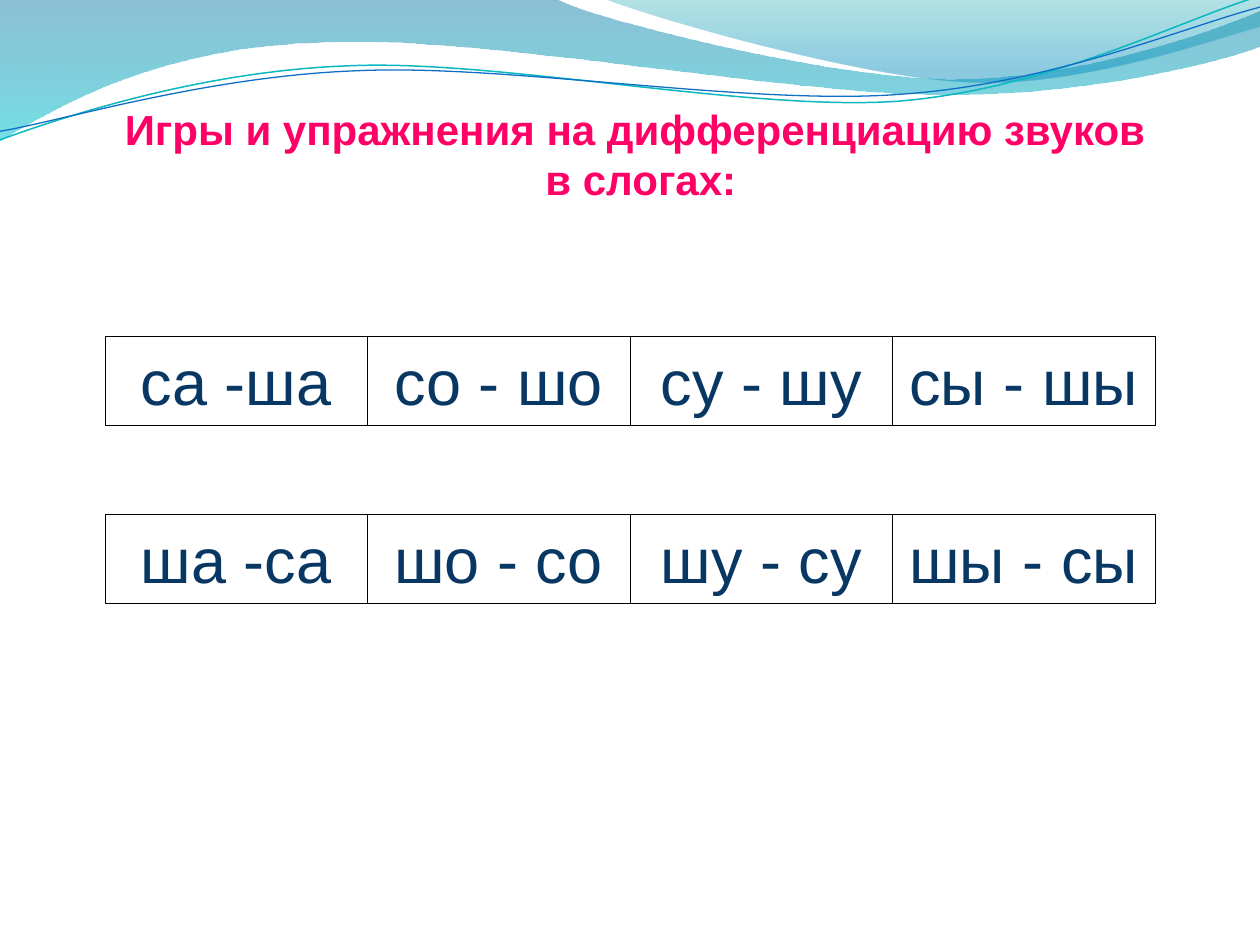
from dataclasses import dataclass
from math import cos, radians, sin

from lxml import etree
from pptx import Presentation
from pptx.dml.color import RGBColor
from pptx.enum.shapes import MSO_SHAPE
from pptx.enum.text import MSO_ANCHOR, MSO_AUTO_SIZE, PP_ALIGN
from pptx.oxml.ns import qn
from pptx.util import Pt

RECTANGLE = MSO_SHAPE.RECTANGLE
MIDDLE, BOTTOM = MSO_ANCHOR.MIDDLE, MSO_ANCHOR.BOTTOM
CENTER = PP_ALIGN.CENTER
NO_AUTOFIT = MSO_AUTO_SIZE.NONE
TITLE_ONLY = 5
FONT = "Arial"
RIBBON_TILT = -2.7
COLORS = {
    "title": "FF0066",
    "syllable": "083763",
    "border": "000000",
    "deep_blue": "0074A1",
    "turquoise": "00C6CF",
    "teal": "00A1A9",
    "sky": "008BBF",
    "teal_line": "0AB8BF",
    "blue_line": "0F6FC6",
}
SYLLABLE_ROWS = [
    (192, ["са -ша", "со - шо", "су - шу", "сы - шы"]),
    (293.75, ["ша -са", "шо - со", "шу - су", "шы - сы"]),
]
CELL_LEFT, CELL_WIDTH, CELL_HEIGHT = 60, 150, 51

Point = tuple[float, float]
Segment = tuple[Point, ...]


@dataclass
class Stop:
    position: float
    color: str
    opacity: int


@dataclass
class Wave:
    start: Point
    segments: list[Segment]
    stops: tuple[Stop, Stop]


@dataclass
class Ribbon:
    start: Point
    segments: list[Segment]
    color: str
    width: float


WAVES = [
    Wave(
        (0, 0),
        [
            ((316.8, -0.7),),
            ((342.7, 12.2), (478.1, 45.4), (545.8, 45.4)),
            ((614.2, 45.4), (689.8, 18.7), (720, 6.5)),
            ((720.7, 25.9),),
            ((707.8, 31.7), (626.4, 54.7), (537.1, 54)),
            ((447.8, 54), (275, 20.2), (185, 24.5)),
            ((92.9, 25.9), (33.1, 59.8), (-0.7, 81.4)),
        ],
        (Stop(0, "deep_blue", 45), Stop(1, "turquoise", 55)),
    ),
    Wave(
        (344.9, -0.7),
        [
            ((366.5, 7.9), (491, 44.6), (553.7, 46.8)),
            ((616.3, 49.7), (691.9, 23), (720, 15.1)),
            ((720, 0),),
        ],
        (Stop(0, "teal", 30), Stop(0.8, "sky", 45)),
    ),
]
RIBBONS = [
    Ribbon(
        (0, 79.9),
        [
            ((34.6, 67), (113.8, 41), (199.4, 37.4)),
            ((284.4, 33.8), (427, 64.1), (513.4, 57.6)),
            ((599.8, 51.1), (675.4, 10.8), (718.6, -1.4)),
        ],
        "teal_line",
        0.85,
    ),
    Ribbon(
        (0, 74.9),
        [
            ((33.8, 69.1), (118.1, 43.9), (203.8, 40.3)),
            ((290.2, 36.7), (429.8, 60.5), (516.2, 54)),
            ((601.9, 48.2), (677.5, 15.1), (720, 4.3)),
        ],
        "blue_line",
        0.75,
    ),
]


def rgb(name: str) -> RGBColor:
    return RGBColor.from_string(COLORS[name])


def turn(point: Point, degrees: float) -> Point:
    x, y = point
    angle = radians(degrees)
    return x * cos(angle) - y * sin(angle), x * sin(angle) + y * cos(angle)


def draw_outline(page, start: Point, segments: list[Segment], close: bool):
    builder = page.shapes.build_freeform(*start, scale=Pt(1))
    builder.add_line_segments([point for segment in segments for point in segment], close=close)
    shape = builder.convert_to_shape()
    shape.shadow.inherit = False
    steps = iter(list(shape.element.spPr.iter(qn("a:lnTo"))))
    for segment in segments:
        first, *others = [next(steps) for _ in segment]
        if others:
            first.tag = qn("a:cubicBezTo")
        for other in others:
            first.append(other[0])
            other.getparent().remove(other)
    return shape


def draw_wave(page, wave: Wave) -> None:
    shape = draw_outline(page, wave.start, wave.segments, True)
    shape.line.fill.background()
    shape.fill.gradient()
    shape.fill.gradient_angle = 270
    for target, stop in zip(shape.fill.gradient_stops, wave.stops):
        target.position = stop.position
        target.color.rgb = rgb(stop.color)
    gradient = shape.element.spPr.find(qn("a:gradFill"))
    for color, stop in zip(gradient.iter(qn("a:srgbClr")), wave.stops):
        etree.SubElement(color, qn("a:alpha")).set("val", str(stop.opacity * 1000))


def draw_ribbon(page, ribbon: Ribbon) -> None:
    level_start = turn(ribbon.start, -RIBBON_TILT)
    level_segments = [tuple(turn(p, -RIBBON_TILT) for p in segment) for segment in ribbon.segments]
    shape = draw_outline(page, level_start, level_segments, False)
    middle = (shape.left + shape.width / 2, shape.top + shape.height / 2)
    x, y = turn(middle, RIBBON_TILT)
    shape.left, shape.top = int(x - shape.width / 2), int(y - shape.height / 2)
    shape.rotation = RIBBON_TILT
    shape.fill.background()
    shape.line.color.rgb = rgb(ribbon.color)
    shape.line.width = Pt(ribbon.width)


def format_para(para, size: float, color: str, bold: bool) -> None:
    para.alignment = CENTER
    para.font.name = FONT
    para.font.size = Pt(size)
    para.font.bold = bold
    para.font.color.rgb = rgb(color)


def write_title(page) -> None:
    title = page.shapes.title
    title.left, title.top, title.width, title.height = Pt(36), Pt(55.4), Pt(653.8), Pt(90)
    frame = title.text_frame
    frame.auto_size = NO_AUTOFIT
    frame.word_wrap = True
    frame.vertical_anchor = BOTTOM
    frame.margin_left = frame.margin_right = 0
    frame.margin_bottom = Pt(28.8)
    para = frame.paragraphs[0]
    para.text = "Игры и упражнения на дифференциацию звуков\v в слогах:"
    format_para(para, 24, "title", True)


def draw_cell(page, left: float, top: float, text: str) -> None:
    box = page.shapes.add_shape(RECTANGLE, Pt(left), Pt(top), Pt(CELL_WIDTH), Pt(CELL_HEIGHT))
    box.shadow.inherit = False
    box.fill.background()
    box.line.color.rgb = rgb("border")
    box.line.width = Pt(0.25)
    box.text_frame.vertical_anchor = MIDDLE
    para = box.text_frame.paragraphs[0]
    para.text = text
    format_para(para, 36, "syllable", False)


def main() -> None:
    deck = Presentation()
    deck.slide_width, deck.slide_height = Pt(720), Pt(540)
    page = deck.slides.add_slide(deck.slide_layouts[TITLE_ONLY])
    for wave in WAVES:
        draw_wave(page, wave)
    for ribbon in RIBBONS:
        draw_ribbon(page, ribbon)
    write_title(page)
    for top, syllables in SYLLABLE_ROWS:
        for column, text in enumerate(syllables):
            draw_cell(page, CELL_LEFT + column * CELL_WIDTH, top, text)
    deck.save("out.pptx")


if __name__ == "__main__":
    main()
